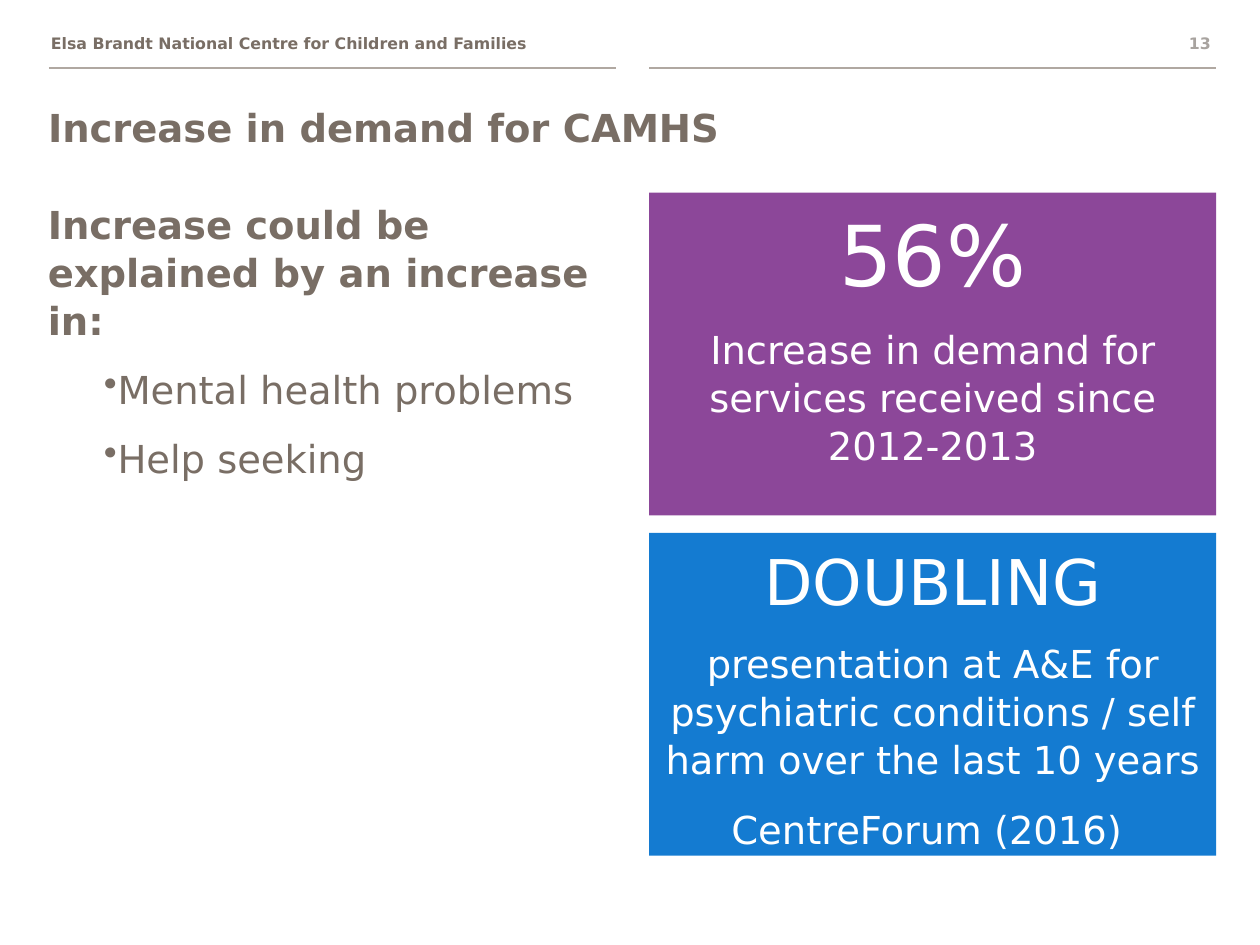
"""Build the slide on the increase in demand for CAMHS."""
from lxml import etree
from pptx import Presentation
from pptx.dml.color import RGBColor
from pptx.enum import shapes, text
from pptx.oxml import ns
from pptx.util import Pt

BROWN, GREY, RULE, WHITE = "796E65", "A8A39F", "B0A8A1", "FFFFFF"
PURPLE, BLUE = "8C4799", "147BD1"
LEFT, CENTER, RIGHT = text.PP_ALIGN.LEFT, text.PP_ALIGN.CENTER, text.PP_ALIGN.RIGHT
BODY_SIZE, SMALL_SIZE, GAP = 22, 9, 12
COLUMN_LEFT, COLUMN_WIDTH = 371, 324
CARD_TOP, CARD_HEIGHT, CARD_STEP = 110, 184.5, 194.5
RULE_LEFTS, RULE_TOP = (28, COLUMN_LEFT), 38.9

TITLE = "Increase in demand for CAMHS"
HEADER = "Elsa Brandt National Centre for Children and Families"
NUMBER = "13"
REASONS = [
    ("Increase could be explained by an increase in:", {"bold": True}, False),
    ("Mental health problems", {}, True),
    ("Help seeking", {}, True),
]
CARDS = [
    (PURPLE, [
        ("56%", {"size": Pt(48)}, False),
        ("Increase in demand for services received since 2012-2013", {}, False),
    ]),
    (BLUE, [
        ("DOUBLING", {"size": Pt(36)}, False),
        ("presentation at A&E for psychiatric conditions / self harm "
         "over the last 10 years", {}, False),
        ("CentreForum (2016) ", {}, False),
    ]),
]


def color(value):
    return RGBColor.from_string(value)


def add_bullet(para):
    props = para._p.get_or_add_pPr()
    props.set("marL", str(Pt(32)))
    props.set("indent", "0")
    etree.SubElement(props, ns.qn("a:buChar")).set("char", "•")


def write(box, lines, ink, align=LEFT, size=BODY_SIZE, spacing=1.04):
    frame = box.text_frame
    frame.word_wrap = True
    frame.auto_size = text.MSO_AUTO_SIZE.NONE
    frame.vertical_anchor = text.MSO_ANCHOR.TOP
    for index, (words, extra, bulleted) in enumerate(lines):
        para = frame.add_paragraph() if index else frame.paragraphs[0]
        para.alignment = align
        para.line_spacing = spacing
        para.space_before = Pt(GAP if index else 0)
        if bulleted:
            para.level = 1
            add_bullet(para)
        span = para.add_run()
        span.text = words
        look = {"name": "DejaVu Sans", "size": Pt(size), "bold": False, **extra}
        for name, value in look.items():
            setattr(span.font, name, value)
        span.font.color.rgb = color(ink)


def add_text(page, place, *args, **options):
    write(page.shapes.add_textbox(*map(Pt, place)), *args, **options)


def add_rule(page, left):
    ends = (left, RULE_TOP, left + COLUMN_WIDTH, RULE_TOP)
    rule = page.shapes.add_connector(shapes.MSO_CONNECTOR.STRAIGHT, *map(Pt, ends))
    rule.line.color.rgb = color(RULE)
    rule.line.width = Pt(1)
    etree.SubElement(rule._element.spPr, ns.qn("a:effectLst"))


def add_card(page, index, fill, lines):
    place = (COLUMN_LEFT, CARD_TOP + index * CARD_STEP, COLUMN_WIDTH, CARD_HEIGHT)
    card = page.shapes.add_shape(shapes.MSO_SHAPE.RECTANGLE, *map(Pt, place))
    card.shadow.inherit = False
    card.fill.solid()
    card.fill.fore_color.rgb = color(fill)
    card.line.fill.background()
    write(card, lines, WHITE, CENTER)


def main():
    deck = Presentation()
    deck.slide_width, deck.slide_height = Pt(720), Pt(540)
    page = deck.slides.add_slide(deck.slide_layouts[5])
    for left in RULE_LEFTS:
        add_rule(page, left)
    small = {"size": SMALL_SIZE, "spacing": 1}
    add_text(page, (22, 16, 323, 18), [(HEADER, {"bold": True}, False)], BROWN, **small)
    add_text(page, (657, 16, 42, 18), [(NUMBER, {"bold": True}, False)], GREY, RIGHT, **small)
    title = page.shapes.title
    title.left, title.top, title.width, title.height = map(Pt, (20.3, 55, 648, 55))
    write(title, [(TITLE, {"bold": True}, False)], BROWN)
    add_text(page, (20.3, CARD_TOP, 332, 372), REASONS, BROWN)
    for index, (fill, lines) in enumerate(CARDS):
        add_card(page, index, fill, lines)
    deck.save("out.pptx")


if __name__ == "__main__":
    main()
